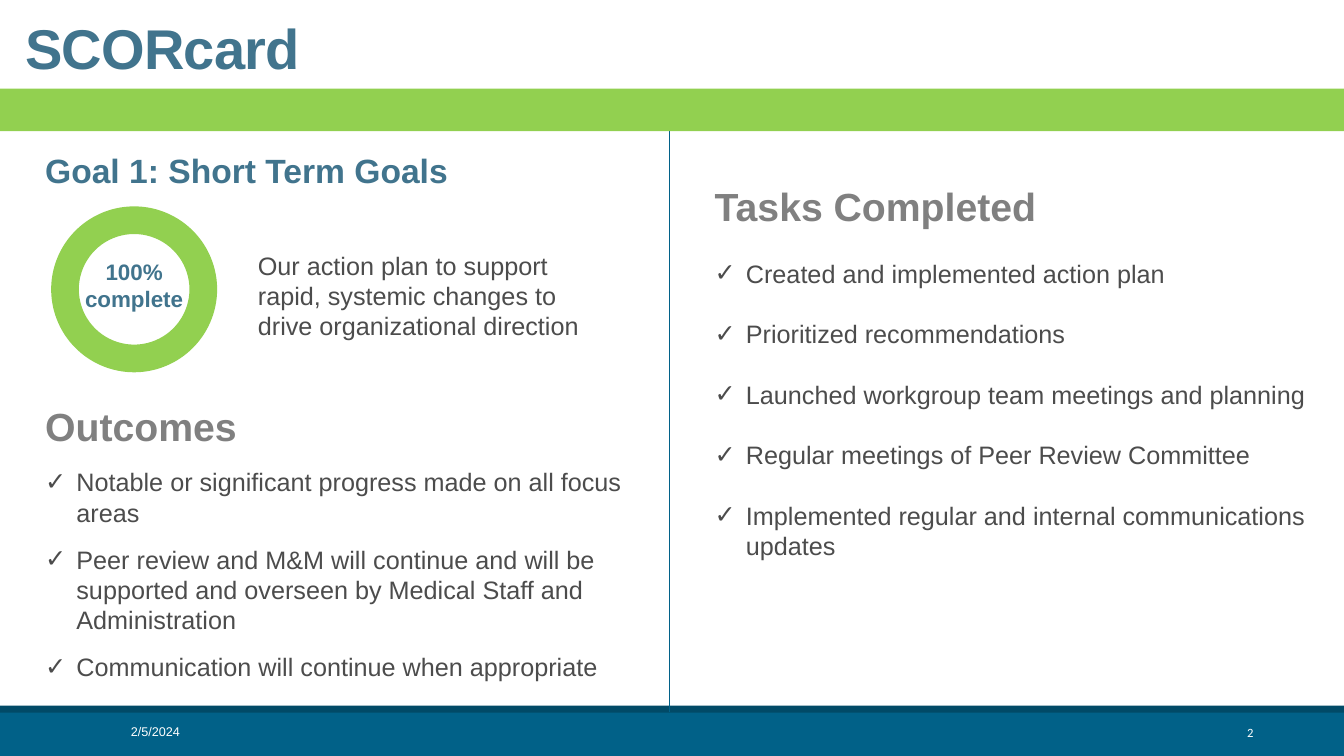
from lxml import etree
from pptx import Presentation
from pptx.chart.data import CategoryChartData
from pptx.dml.color import RGBColor
from pptx.enum.chart import XL_CHART_TYPE
from pptx.enum.shapes import MSO_CONNECTOR, MSO_SHAPE
from pptx.enum.text import MSO_ANCHOR, PP_ALIGN
from pptx.oxml import parse_xml
from pptx.oxml.ns import nsdecls, qn
from pptx.util import Inches, Pt

DOUGHNUT = XL_CHART_TYPE.DOUGHNUT
STRAIGHT = MSO_CONNECTOR.STRAIGHT
RECTANGLE = MSO_SHAPE.RECTANGLE
TOP, MIDDLE, BOTTOM = MSO_ANCHOR.TOP, MSO_ANCHOR.MIDDLE, MSO_ANCHOR.BOTTOM
LEFT, CENTER, RIGHT = PP_ALIGN.LEFT, PP_ALIGN.CENTER, PP_ALIGN.RIGHT

WIDTH, HEIGHT = 13.33, 7.5
BLUE, NAVY, STEEL = "016188", "014A67", "41748D"
GREEN, GRAY, INK, WHITE = "92D050", "808080", "4C4C4C", "FFFFFF"
OUTCOMES = [
    "Notable or significant progress made on all focus areas",
    "Peer review and M&M will continue and will be supported and overseen "
    "by Medical Staff and Administration",
    "Communication will continue when appropriate",
]
TASKS = [
    "Created and implemented action plan",
    "Prioritized recommendations",
    "Launched workgroup team meetings and planning",
    "Regular meetings of Peer Review Committee",
    "Implemented regular and internal communications updates",
]


def rgb(color):
    return RGBColor.from_string(color)


def add_band(s, x, y, w, h, color):
    band = s.shapes.add_shape(RECTANGLE, Inches(x), Inches(y), Inches(w), Inches(h))
    band.shadow.inherit = False
    band.fill.solid()
    band.fill.fore_color.rgb = rgb(color)
    band.line.fill.background()


def add_check(p):
    pPr = p._p.get_or_add_pPr()
    pPr.set("marL", str(Inches(0.31)))
    pPr.set("indent", str(-Inches(0.31)))
    etree.SubElement(pPr, qn("a:buFont")).set("typeface", "Arial")
    etree.SubElement(pPr, qn("a:buChar")).set("char", "✓")


def add_text(s, x, y, w, h, lines, size, color, bold=False, align=LEFT,
             anchor=TOP, font="Arial", leading=None, gap=0, checked=False):
    sp = s.shapes.add_textbox(Inches(x), Inches(y), Inches(w), Inches(h))
    tf = sp.text_frame
    tf.word_wrap = True
    tf.vertical_anchor = anchor
    tf.text = "\n".join(lines)
    for p in tf.paragraphs:
        p.alignment = align
        p.space_after = Pt(gap)
        if leading:
            p.line_spacing = leading
        if checked:
            add_check(p)
        for r in p.runs:
            r.font.size = Pt(size)
            r.font.name = font
            r.font.bold = bold
            r.font.color.rgb = rgb(color)
    return sp


def add_checklist(s, x, y, w, h, items, gap):
    add_text(s, x, y, w, h, items, 18, INK, leading=Pt(21.6), gap=gap, checked=True)


def add_heading(s, x, y, w, text):
    add_text(s, x, y, w, 0.57, [text], 28, GRAY, bold=True)


def add_header(s, x, y, w):
    title = add_text(s, x + 0.15, y + 0.13, 2.95, 0.72, ["SCORcard"], 40, STEEL,
                     bold=True, anchor=BOTTOM, leading=0.85)
    title.text_frame.word_wrap = False
    title.text_frame.paragraphs[0].runs[0]._r.get_or_add_rPr().set("spc", "-50")
    add_band(s, x, y + 0.88, w, 0.42, GREEN)


def add_footer(s, x, y, w):
    add_band(s, x, y + 0.06, w, 0.44, BLUE)
    add_band(s, x, y, w, 0.07, NAVY)
    add_text(s, x + 1.2, y + 0.06, 2.7, 0.4, ["2/5/2024"], 9, WHITE, anchor=MIDDLE)
    add_text(s, x + 10.52, y + 0.14, 2.01, 0.25, ["2"], 9, WHITE, align=RIGHT,
             anchor=MIDDLE, font="Calibri")


def add_divider(s, x, top, bottom):
    line = s.shapes.add_connector(STRAIGHT, Inches(x), Inches(bottom),
                                  Inches(x), Inches(top))
    line.line.color.rgb = rgb(BLUE)
    line.line.width = Pt(1)
    etree.SubElement(line._element.spPr, qn("a:effectLst"))


def place_plot(chart, x, y, w, h):
    plot_area = chart._chartSpace.chart.plotArea
    for old in plot_area.findall(qn("c:layout")):
        plot_area.remove(old)
    sizes = "".join(f'<c:{tag} val="{val}"/>'
                    for tag, val in zip("xywh", (x, y, w, h)))
    plot_area.insert(0, parse_xml(
        f'<c:layout {nsdecls("c")}><c:manualLayout><c:layoutTarget val="inner"/>'
        f'<c:xMode val="edge"/><c:yMode val="edge"/>{sizes}'
        '</c:manualLayout></c:layout>'))


def add_progress_ring(s, x, y, w, h):
    data = CategoryChartData()
    data.categories = ["1", "2", "3", "4"]
    data.add_series("Series 1", (0, 0, None, None))
    data.add_series("Series 2", (100, 0, None, None))
    chart = s.shapes.add_chart(DOUGHNUT, Inches(x), Inches(y), Inches(w),
                               Inches(h), data).chart
    chart.has_legend = False
    chart.has_title = False
    chart.font.name = "Calibri"
    chart.font.size = Pt(10)
    chart.font.color.rgb = rgb(INK)
    ring_colors = [("767676", "BABABA", "969696", "535353"),
                   (GREEN, BLUE, "969696", "535353")]
    for series, colors in zip(chart.plots[0].series, ring_colors):
        for i, color in enumerate(colors):
            point = series.points[i].format
            point.fill.solid()
            point.fill.fore_color.rgb = rgb(color)
            point.line.fill.background()
    place_plot(chart, 0.03, 0.01, 0.88, 0.92)
    add_text(s, x + 0.16, y + 0.48, 1.52, 0.64, ["100%", "complete"], 16, STEEL,
             bold=True, align=CENTER, anchor=MIDDLE, leading=Pt(19.2))


def add_goal_column(s, x, y):
    add_text(s, x, y, 4.23, 0.5, ["Goal 1: Short Term Goals"], 24, STEEL, bold=True)
    add_progress_ring(s, x + 0.06, y + 0.59, 1.96, 1.79)
    add_text(s, x + 2.11, y + 0.99, 3.7, 1.01,
             ["Our action plan to support rapid, systemic changes to drive "
              "organizational direction"], 18, INK, leading=Pt(21.6))
    add_heading(s, x, y + 2.5, 5.18, "Outcomes")
    add_checklist(s, x, y + 3.14, 6.23, 2.73, OUTCOMES, 12)


def add_task_column(s, x, y):
    add_heading(s, x, y, 4.17, "Tasks Completed")
    add_checklist(s, x, y + 0.75, 6.23, 3.13, TASKS, 21.6)


def main():
    prs = Presentation()
    prs.slide_width, prs.slide_height = Inches(WIDTH), Inches(HEIGHT)
    s = prs.slides.add_slide(prs.slide_layouts[6])
    add_footer(s, 0, 7, WIDTH)
    add_divider(s, 6.64, 1.3, 7.06)
    add_task_column(s, 6.99, 1.76)
    add_goal_column(s, 0.35, 1.44)
    add_header(s, 0, 0, WIDTH)
    prs.save("out.pptx")


if __name__ == "__main__":
    main()
